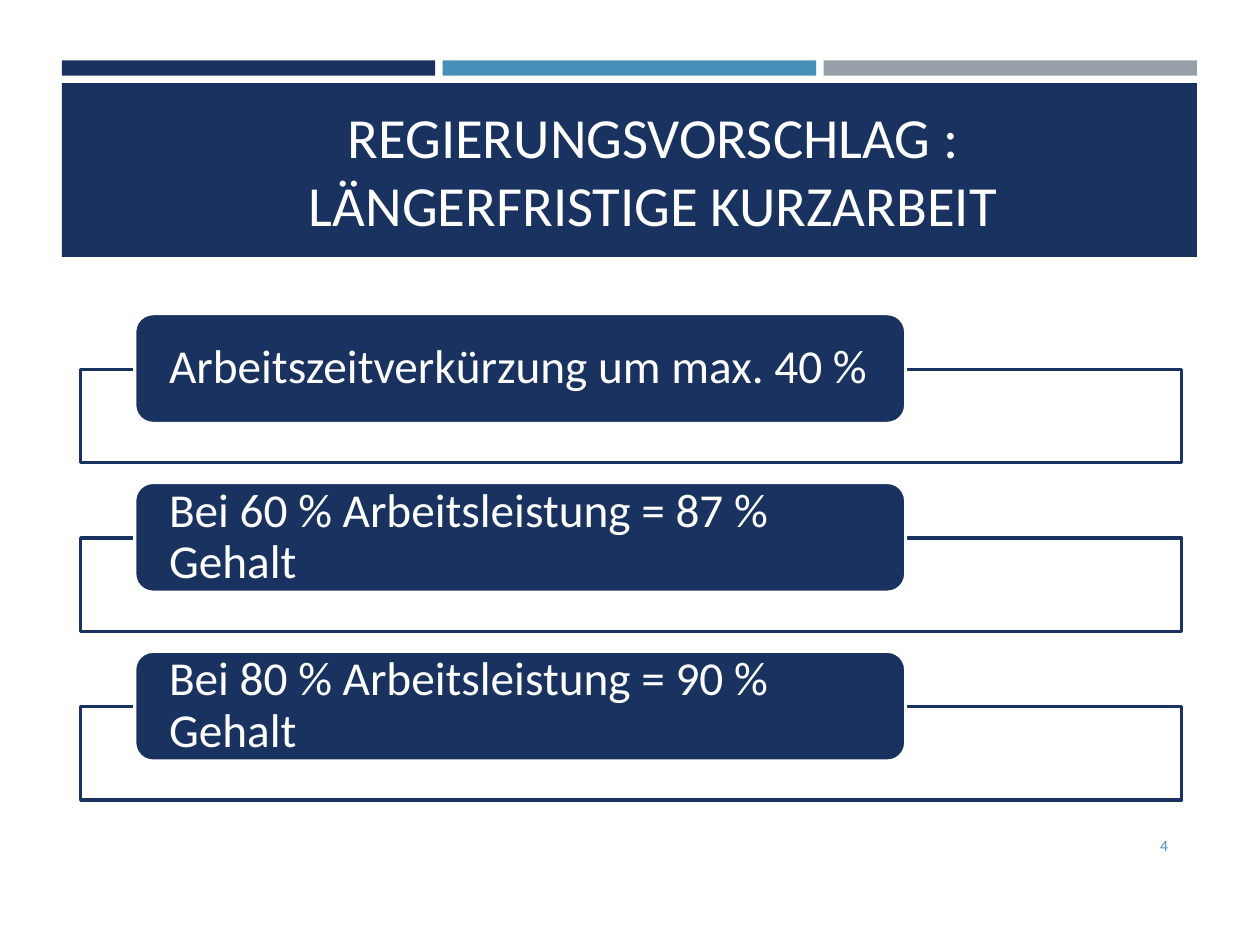
from pptx import Presentation
from pptx.dml.color import RGBColor
from pptx.enum import shapes, text
from pptx.util import Inches, Pt

NAVY, BLUE, GREY, WHITE = "1A3260", "4590B8", "969FA7", "FFFFFF"
FONT = "Calibri"
RECT = shapes.MSO_SHAPE.RECTANGLE
PILL = shapes.MSO_SHAPE.ROUNDED_RECTANGLE
LEFT, MID, RIGHT = text.PP_ALIGN.LEFT, text.PP_ALIGN.CENTER, text.PP_ALIGN.RIGHT


def color(code):
    return RGBColor.from_string(code)


def block(slide, kind, box, fill, line=None):
    shape = slide.shapes.add_shape(kind, *map(Inches, box))
    shape.shadow.inherit = False
    shape.fill.solid()
    shape.fill.fore_color.rgb = color(fill)
    if line:
        shape.line.color.rgb = color(line)
        shape.line.width = Pt(1.75)
    else:
        shape.line.fill.background()
    return shape


def write(shape, lines, size, ink, align, anchor=text.MSO_ANCHOR.MIDDLE):
    frame = shape.text_frame
    frame.word_wrap = True
    frame.vertical_anchor = anchor
    para = frame.paragraphs[0]
    para.alignment = align
    for i, words in enumerate(lines):
        if i:
            para.add_line_break()
        run = para.add_run()
        run.text = words
        run.font.name = FONT
        run.font.size = Pt(size)
        run.font.color.rgb = color(ink)
    return frame


def stripes(slide, left, top, width, height):
    gap = 0.06
    part = (width - 2 * gap) / 3
    for i, fill in enumerate((NAVY, BLUE, GREY)):
        block(slide, RECT, (left + i * (part + gap), top, part, height), fill)


def banner(slide, left, top, width, height, lines):
    block(slide, RECT, (left, top, width, height), NAVY)
    box = slide.shapes.add_textbox(Inches(left + 0.51), Inches(top + 0.17),
                                   Inches(width - 0.64), Inches(height - 0.27))
    write(box, lines, 32.4, WHITE, MID, text.MSO_ANCHOR.BOTTOM)


def points(slide, left, top, width, items):
    pitch = 1.34
    for i, words in enumerate(items):
        y = top + i * pitch
        # Outlined frame behind the label
        block(slide, RECT, (left, y + 0.44, width, 0.74), WHITE, NAVY)
        # Label that overlaps the frame's top edge
        label = block(slide, PILL, (left + 0.43, y, width * 0.7, 0.87), NAVY, WHITE)
        frame = write(label, [words], 27, WHITE, LEFT)
        frame.margin_left = frame.margin_right = Inches(0.23)
        frame.margin_top = frame.margin_bottom = 0
        frame.paragraphs[0].line_spacing = 0.9


def number(slide, left, top, width, height, value):
    box = slide.shapes.add_textbox(*map(Inches, (left, top, width, height)))
    write(box, [value], 9, BLUE, RIGHT)


def main():
    deck = Presentation()
    deck.slide_width, deck.slide_height = Inches(10), Inches(7.5)
    slide = deck.slides.add_slide(deck.slide_layouts[6])
    stripes(slide, 0.49, 0.48, 9.01, 0.12)
    banner(slide, 0.49, 0.66, 9.01, 1.38,
           ["REGIERUNGSVORSCHLAG :", "LÄNGERFRISTIGE KURZARBEIT"])
    points(slide, 0.64, 2.49, 8.74, [
        "Arbeitszeitverkürzung um max. 40 %",
        "Bei 60 % Arbeitsleistung = 87 % Gehalt",
        "Bei 80 % Arbeitsleistung = 90 % Gehalt",
    ])
    number(slide, 8.53, 6.51, 0.84, 0.4, "4")
    deck.save("out.pptx")


if __name__ == "__main__":
    main()
